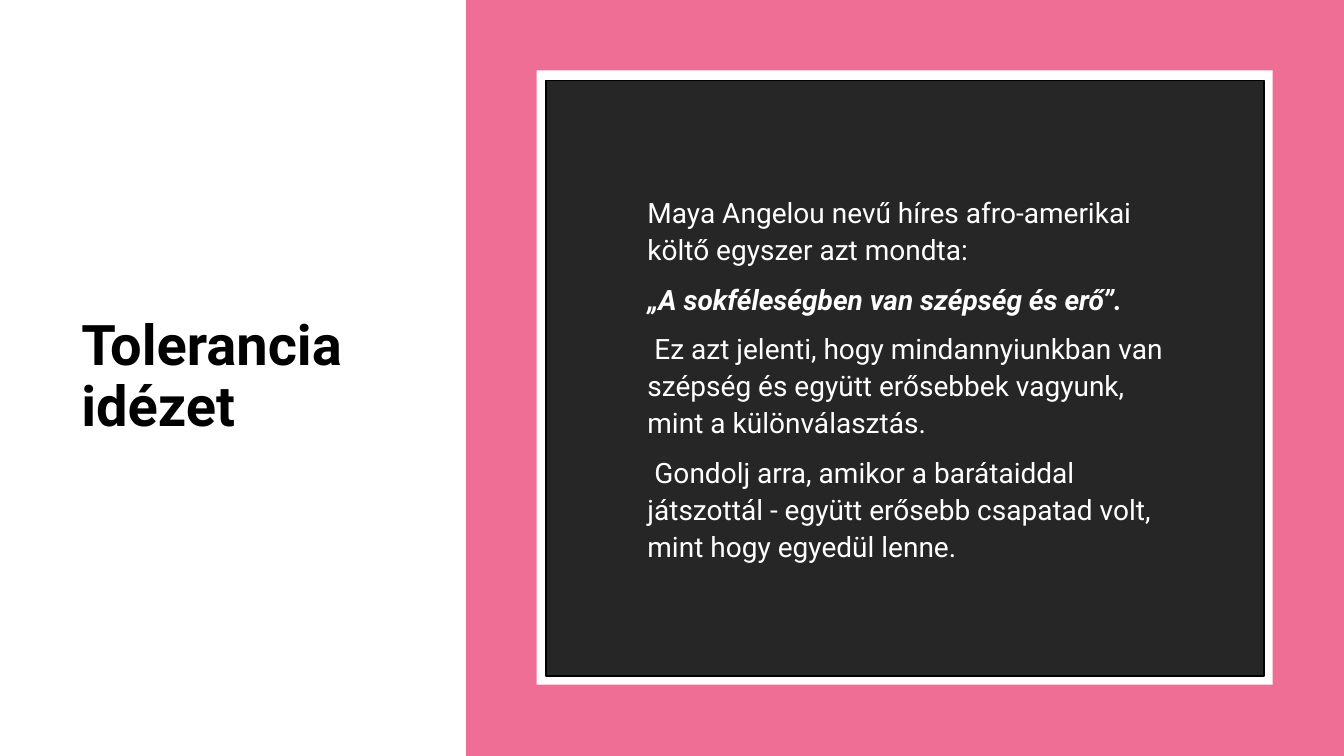
from dataclasses import dataclass

from pptx import Presentation
from pptx import util as u
from pptx.dml.color import RGBColor
from pptx.enum import shapes, text

PX = 9525  # EMU per px, 96 px to the inch
PAGE_W, PAGE_H = 1280, 720


@dataclass(frozen=True)
class Theme:
    font: str = "Roboto"
    white: str = "FFFFFF"
    black: str = "000000"
    pink: str = "EE6E96"
    dark: str = "262626"
    title_size: int = 40
    body_size: int = 20


@dataclass(frozen=True)
class Area:
    left: int
    top: int
    width: int
    height: int

    def emu(self) -> list[u.Emu]:
        return [u.Emu(n * PX) for n in (self.left, self.top, self.width, self.height)]


@dataclass(frozen=True)
class Panel:
    area: Area
    fill: str
    outline: str | None = None


@dataclass(frozen=True)
class Passage:
    words: str
    bold: bool = False
    italic: bool = False


@dataclass(frozen=True)
class TextBlock:
    area: Area
    passages: list[Passage]
    size: int
    color: str
    line_spacing: float
    gap: int = 0
    indent: int = 0


THEME = Theme()

# Background, pink side, white frame and dark card
PANELS = [
    Panel(Area(0, 0, PAGE_W, PAGE_H), THEME.white),
    Panel(Area(444, 0, PAGE_W - 444, PAGE_H), THEME.pink),
    Panel(Area(511, 67, 701, 585), THEME.white),
    Panel(Area(520, 77, 684, 567), THEME.dark, THEME.black),
]

TITLE = TextBlock(
    Area(68, 123, 344, 474),
    [Passage("Tolerancia idézet", bold=True)],
    THEME.title_size, THEME.black, line_spacing=0.9,
)

QUOTE = TextBlock(
    Area(588, 143, 548, 433),
    [
        Passage("Maya Angelou nevű híres afro-amerikai költő egyszer azt mondta:"),
        Passage("„A sokféleségben van szépség és erő”.", bold=True, italic=True),
        Passage(" Ez azt jelenti, hogy mindannyiunkban van szépség és együtt "
                "erősebbek vagyunk, mint a különválasztás."),
        Passage(" Gondolj arra, amikor a barátaiddal játszottál - együtt erősebb "
                "csapatad volt, mint hogy egyedül lenne."),
    ],
    THEME.body_size, THEME.white, line_spacing=1.1, gap=9, indent=19,
)


def draw_panel(page, panel: Panel) -> None:
    shape = page.shapes.add_shape(shapes.MSO_SHAPE.RECTANGLE, *panel.area.emu())
    shape.shadow.inherit = False
    shape.fill.solid()
    shape.fill.fore_color.rgb = RGBColor.from_string(panel.fill)
    if panel.outline:
        shape.line.color.rgb = RGBColor.from_string(panel.outline)
        shape.line.width = u.Pt(1)
    else:
        shape.line.fill.background()


def draw_text(page, block: TextBlock) -> None:
    # The left inset carries the paragraph indent
    box = page.shapes.add_textbox(*block.area.emu())
    frame = box.text_frame
    frame.word_wrap = True
    frame.vertical_anchor = text.MSO_ANCHOR.MIDDLE
    frame.margin_left = u.Emu(frame.margin_left + block.indent * PX)
    frame.text = "\n".join(passage.words for passage in block.passages)
    for number, (para, passage) in enumerate(zip(frame.paragraphs, block.passages)):
        para.line_spacing = block.line_spacing
        para.space_before = u.Pt(block.gap if number else 0)
        for span in para.runs:
            span.font.name = THEME.font
            span.font.size = u.Pt(block.size)
            span.font.bold = passage.bold
            span.font.italic = passage.italic
            span.font.color.rgb = RGBColor.from_string(block.color)


def main() -> None:
    deck = Presentation()
    deck.slide_width = u.Emu(PAGE_W * PX)
    deck.slide_height = u.Emu(PAGE_H * PX)
    page = deck.slides.add_slide(deck.slide_layouts[6])
    for panel in PANELS:
        draw_panel(page, panel)
    for block in (TITLE, QUOTE):
        draw_text(page, block)
    deck.save("out.pptx")


if __name__ == "__main__":
    main()
